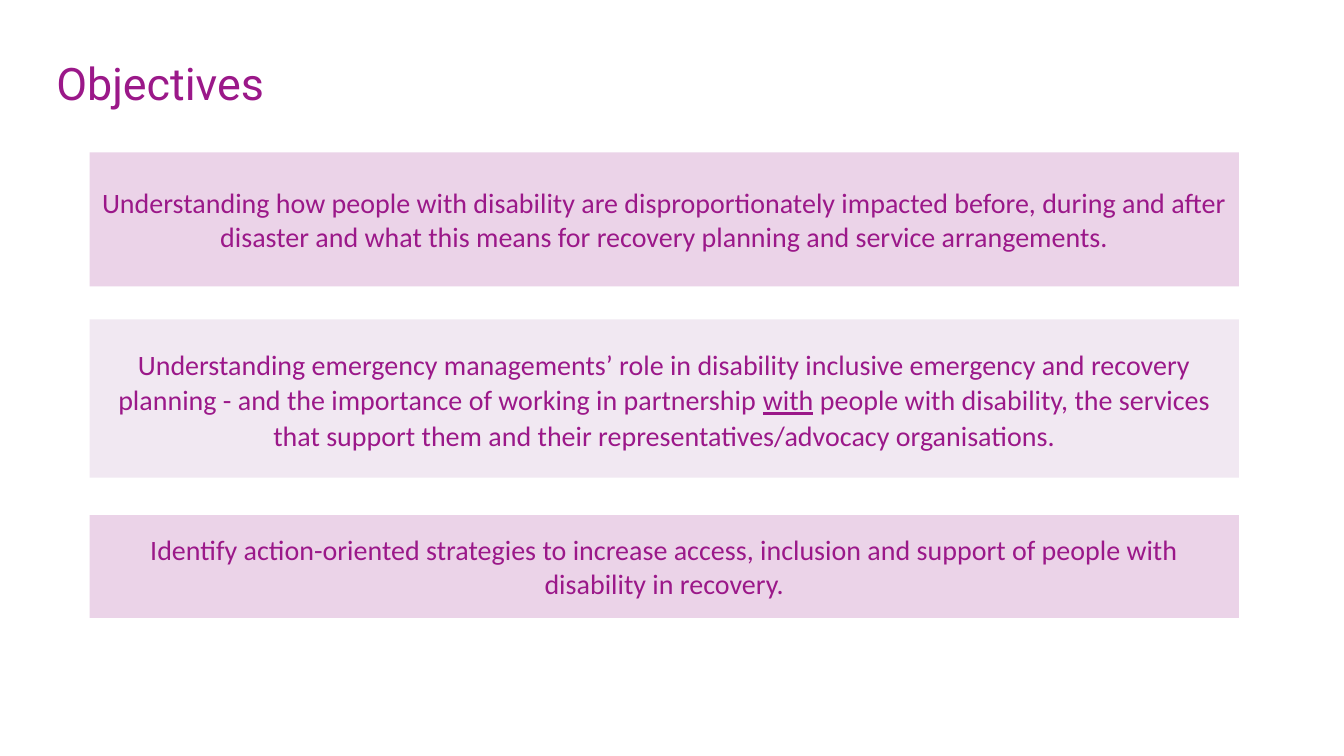
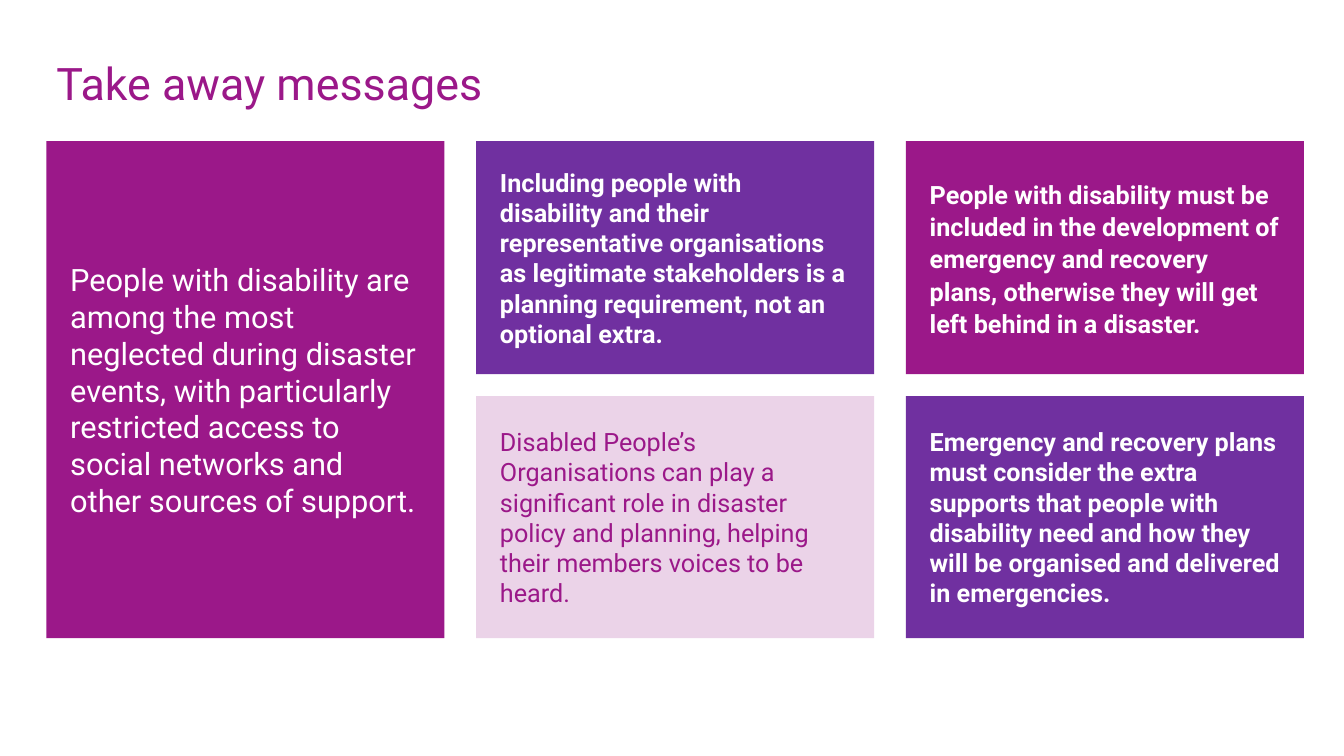
from pptx import Presentation
from pptx.dml.color import RGBColor
from pptx.enum.shapes import MSO_SHAPE
from pptx.enum.text import MSO_ANCHOR, PP_ALIGN
from pptx.util import Cm, Pt

MAGENTA = RGBColor(0x9B, 0x18, 0x89)
PURPLE = RGBColor(0x70, 0x30, 0xA0)
PINK = RGBColor(0xEB, 0xD3, 0xE8)
PALE_LILAC = RGBColor(0xF1, 0xE8, 0xF2)
WHITE = RGBColor(0xFF, 0xFF, 0xFF)

MARGIN = 1.17

# top, height, fill, line spacing, text before, underlined word, text after
OBJECTIVES = [
    (3.84, 3.38, PINK, 1.0,
     "Understanding how people with disability are disproportionately impacted before, during "
     "and after disaster and what this means for recovery planning and service arrangements.",
     "", ""),
    (8.05, 3.99, PALE_LILAC, 1.07,
     "Understanding emergency managements’ role in disability inclusive emergency and recovery "
     "planning - and the importance of working in partnership ",
     "with",
     " people with disability, the services that support them and their "
     "representatives/advocacy organisations."),
    (12.98, 2.59, PINK, 1.0,
     "Identify action-oriented strategies to increase access, inclusion and support of people "
     "with disability in recovery.",
     "", ""),
]

CARD_WIDTH = 10.03
COLUMN_GAP = 0.8
ROW_TOPS = (3.56, 9.98)
ROW_HEIGHTS = (5.87, 6.1)
FULL_HEIGHT = ROW_TOPS[1] + ROW_HEIGHTS[1] - ROW_TOPS[0]

# column, row, height, fill, text colour, size, bold, line spacing, text
MESSAGES = [
    (0, 0, FULL_HEIGHT, MAGENTA, WHITE, 22, False, 1.0,
     "People with disability are among the most neglected during disaster events, with "
     "particularly restricted access to social networks and other sources of support."),
    (1, 0, ROW_HEIGHTS[0], PURPLE, WHITE, 18, True, 1.0,
     "Including people with disability and their representative organisations as legitimate "
     "stakeholders is a planning requirement, not an optional extra."),
    (2, 0, ROW_HEIGHTS[0], MAGENTA, WHITE, 18, True, 1.07,
     "People with disability must be included in the development of emergency and recovery "
     "plans, otherwise they will get left behind in a disaster."),
    (1, 1, ROW_HEIGHTS[1], PINK, MAGENTA, 18, False, 1.0,
     "Disabled People’s Organisations can play a significant role in disaster policy and "
     "planning, helping their members voices to be heard."),
    (2, 1, ROW_HEIGHTS[1], PURPLE, WHITE, 18, True, 1.0,
     "Emergency and recovery plans must consider the extra supports that people with disability "
     "need and how they will be organised and delivered in emergencies."),
]


class Deck:
    heading_font = "Roboto"
    panel_font = "Calibri"

    def __init__(self):
        self.presentation = Presentation()
        self.presentation.slide_width = Cm(33.87)
        self.presentation.slide_height = Cm(19.05)
        self.slide = None

    def add_slide(self, title):
        self.slide = self.presentation.slides.add_slide(self.presentation.slide_layouts[6])
        box = self.slide.shapes.add_textbox(Cm(MARGIN), Cm(0.56), Cm(31.67), Cm(2.9))
        self.set_text(box, [title], self.heading_font, 32, MAGENTA, line_spacing=1.1)

    def set_text(self, shape, parts, font_name, size, color, bold=False,
                 align=PP_ALIGN.LEFT, line_spacing=1.0):
        """Fill a shape with one paragraph, one run per part, and return its runs."""
        frame = shape.text_frame
        frame.word_wrap = True
        frame.vertical_anchor = MSO_ANCHOR.MIDDLE
        paragraph = frame.paragraphs[0]
        paragraph.alignment = align
        paragraph.line_spacing = line_spacing
        for part in parts:
            run = paragraph.add_run()
            run.text = part
            run.font.name = font_name
            run.font.size = Pt(size)
            run.font.bold = bold
            run.font.color.rgb = color
        return paragraph.runs

    def add_rectangle(self, left, top, width, height, fill):
        shape = self.slide.shapes.add_shape(
            MSO_SHAPE.RECTANGLE, Cm(left), Cm(top), Cm(width), Cm(height))
        shape.shadow.inherit = False
        shape.fill.solid()
        shape.fill.fore_color.rgb = fill
        shape.line.fill.background()
        return shape

    def add_objective(self, top, height, fill, line_spacing, before, underlined, after):
        shape = self.add_rectangle(2.26, top, 28.96, height, fill)
        parts = [part for part in (before, underlined, after) if part]
        runs = self.set_text(shape, parts, self.panel_font, 20, MAGENTA,
                             align=PP_ALIGN.CENTER, line_spacing=line_spacing)
        if underlined:
            runs[1].font.underline = True

    def add_message(self, column, row, height, fill, color, size, bold, line_spacing, text):
        left = MARGIN + column * (CARD_WIDTH + COLUMN_GAP)
        shape = self.add_rectangle(left, ROW_TOPS[row], CARD_WIDTH, height, fill)
        frame = shape.text_frame
        frame.margin_left = frame.margin_right = Cm(0.6)
        frame.margin_top = frame.margin_bottom = Cm(0.3)
        self.set_text(shape, [text], self.heading_font, size, color, bold,
                      line_spacing=line_spacing)


def main():
    deck = Deck()
    deck.add_slide("Objectives")
    for objective in OBJECTIVES:
        deck.add_objective(*objective)
    deck.add_slide("Take away messages")
    for message in MESSAGES:
        deck.add_message(*message)
    deck.presentation.save("out.pptx")


if __name__ == "__main__":
    main()
